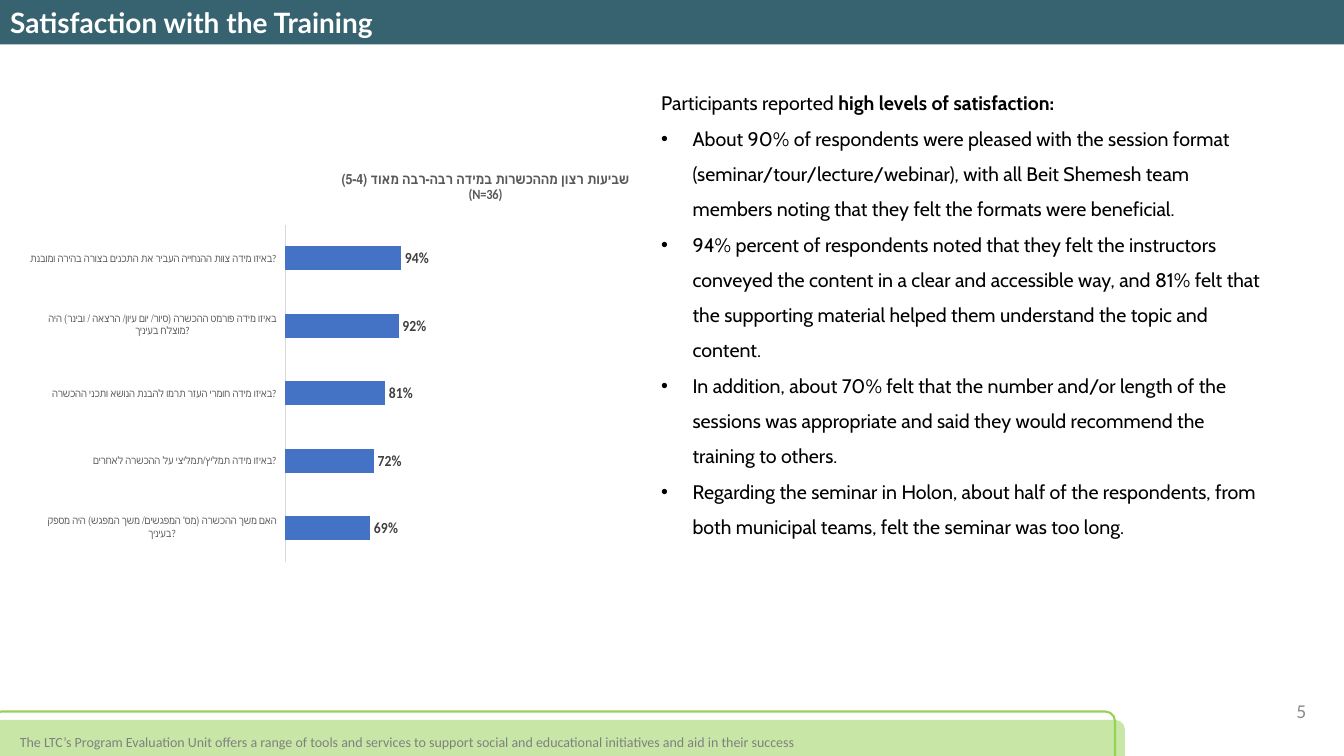
from lxml.etree import SubElement
from pptx import Presentation
from pptx.chart.data import CategoryChartData
from pptx.dml.color import RGBColor
from pptx.enum.chart import XL_CHART_TYPE, XL_LABEL_POSITION, XL_TICK_LABEL_POSITION, XL_TICK_MARK
from pptx.enum.shapes import MSO_SHAPE
from pptx.enum.text import MSO_ANCHOR, MSO_AUTO_SIZE, PP_ALIGN
from pptx.oxml import parse_xml
from pptx.oxml.ns import nsdecls, qn
from pptx.util import Cm, Pt

TITLE = "Satisfaction with the Training"
INTRO = [("Participants reported ", False), ("high levels of satisfaction:", True)]
FINDINGS = [
    "About 90% of respondents were pleased with the session format (seminar/tour/lecture/webinar), "
    "with all Beit Shemesh team members noting that they felt the formats were beneficial.",
    "94% percent of respondents noted that they felt the instructors conveyed the content in a clear "
    "and accessible way, and 81% felt that the supporting material helped them understand the topic "
    "and content.",
    "In addition, about 70% felt that the number and/or length of the sessions was appropriate and "
    "said they would recommend the training to others.",
    "Regarding the seminar in Holon, about half of the respondents, from both municipal teams, felt "
    "the seminar was too long.",
]
FOOTER = ("The LTC’s Program Evaluation Unit offers a range of tools and services to support social "
          "and educational initiatives and aid in their success")
PAGE_NUMBER = "5"
CHART_TITLE = ["שביעות רצון מההכשרות במידה רבה-רבה מאוד (5-4)", "(N=36)"]
RATINGS = [
    ("האם משך ההכשרה (מס' המפגשים/ משך המפגש) היה מספק בעיניך?", 0.69),
    ("באיזו מידה תמליץ/תמליצי על ההכשרה לאחרים?", 0.72),
    ("באיזו מידה חומרי העזר תרמו להבנת הנושא ותכני ההכשרה?", 0.81),
    ("באיזו מידה פורמט ההכשרה (סיור/ יום עיון/ הרצאה / ובינר) היה מוצלח בעיניך?", 0.92),
    ("באיזו מידה צוות ההנחייה העביר את התכנים בצורה בהירה ומובנת?", 0.94),
]


def color(hex_string):
    return RGBColor.from_string(hex_string)


def style_font(font, name, size, hex_string, bold=False):
    font.name, font.size, font.bold = name, Pt(size), bold
    font.color.rgb = color(hex_string)


def add_run(paragraph, text, *style):
    run = paragraph.add_run()
    run.text = text
    style_font(run.font, *style)


def place(shape, left, top, width, height):
    shape.left, shape.top, shape.width, shape.height = Cm(left), Cm(top), Cm(width), Cm(height)


def add_label(slide, box, text, size, hex_string, align, anchor):
    label = slide.shapes.add_textbox(*map(Cm, box))
    frame = label.text_frame
    frame.word_wrap, frame.vertical_anchor = True, anchor
    frame.paragraphs[0].alignment = align
    add_run(frame.paragraphs[0], text, "Calibri", size, hex_string)


def add_footer_bar(slide, box, fill=None, line=None):
    bar = slide.shapes.add_shape(MSO_SHAPE.ROUNDED_RECTANGLE, *map(Cm, box))
    bar.shadow.inherit = False
    if fill:
        bar.fill.solid()
        bar.fill.fore_color.rgb = color(fill)
    else:
        bar.fill.background()
    if line:
        bar.line.color.rgb, bar.line.width = color(line), Pt(1.5)
    else:
        bar.line.fill.background()


def set_bullet(paragraph, character=None):
    properties = paragraph._p.get_or_add_pPr()
    indent = Cm(0.79) if character else 0
    properties.set("marL", str(indent))
    properties.set("indent", str(-indent))
    if character:
        SubElement(properties, qn("a:buFont")).set("typeface", "Arial")
        SubElement(properties, qn("a:buChar")).set("char", character)
    else:
        SubElement(properties, qn("a:buNone"))


def layout_xml(target=None, **fractions):
    """Manual chart layout, with positions as fractions of the chart area."""
    parts = f'<c:layoutTarget val="{target}"/>' if target else ""
    parts += '<c:xMode val="edge"/><c:yMode val="edge"/>'
    parts += "".join(f'<c:{key} val="{value}"/>' for key, value in fractions.items())
    return parse_xml(f'<c:layout {nsdecls("c")}><c:manualLayout>{parts}</c:manualLayout></c:layout>')


def fill_title(title):
    place(title, 0, 0, 33.87, 1.12)
    title.fill.solid()
    title.fill.fore_color.rgb = color("36636F")
    frame = title.text_frame
    frame.auto_size, frame.vertical_anchor = MSO_AUTO_SIZE.NONE, MSO_ANCHOR.MIDDLE
    frame.paragraphs[0].alignment = PP_ALIGN.LEFT
    add_run(frame.paragraphs[0], TITLE, "Lato", 20, "FFFFFF", True)


def fill_findings(body):
    place(body, 16.41, 1.88, 15.85, 11.94)
    frame = body.text_frame
    frame.auto_size, frame.vertical_anchor = MSO_AUTO_SIZE.NONE, MSO_ANCHOR.TOP
    for index, runs in enumerate([INTRO] + [[(text, False)] for text in FINDINGS]):
        paragraph = frame.add_paragraph() if index else frame.paragraphs[0]
        paragraph.line_spacing, paragraph.space_before = 1.5, Pt(0)
        set_bullet(paragraph, "•" if index else None)
        for text, bold in runs:
            add_run(paragraph, text, "Cabin", 14, "000000", bold)


def add_ratings_chart(slide):
    data = CategoryChartData(number_format="0%")
    data.categories = [question for question, _ in RATINGS]
    data.add_series("Series 1", [share for _, share in RATINGS])
    chart = slide.shapes.add_chart(XL_CHART_TYPE.BAR_CLUSTERED, Cm(0.76), Cm(3.81),
                                   Cm(15.27), Cm(10.9), data).chart
    style_font(chart.font, "Calibri", 10, "000000")
    chart.has_legend = False

    title = chart.chart_title
    title.include_in_layout = False
    frame = title.text_frame
    for index, text in enumerate(CHART_TITLE):
        paragraph = frame.add_paragraph() if index else frame.paragraphs[0]
        add_run(paragraph, text, "Calibri", 10, "595959", True)
    for old_layout in title._element.findall(qn("c:layout")):
        title._element.remove(old_layout)
    title._element.find(qn("c:tx")).addnext(layout_xml(x=0.56, y=0.04))

    plot = chart.plots[0]
    plot.gap_width, plot.vary_by_categories = 182, False
    fill = plot.series[0].format.fill
    fill.solid()
    fill.fore_color.rgb = color("4472C4")
    plot.has_data_labels = True
    labels = plot.data_labels
    labels.show_value, labels.position = True, XL_LABEL_POSITION.OUTSIDE_END
    labels.number_format, labels.number_format_is_linked = "0%", False
    style_font(labels.font, "Calibri", 11, "404040", True)

    questions = chart.category_axis
    questions.major_tick_mark = XL_TICK_MARK.NONE
    questions.tick_label_position = XL_TICK_LABEL_POSITION.LOW
    questions.format.line.color.rgb = color("D9D9D9")
    questions.format.line.width = Pt(0.75)
    style_font(questions.tick_labels.font, "Calibri", 7.5, "595959")
    shares = chart.value_axis
    shares.minimum_scale, shares.maximum_scale = 0, 1
    shares.has_major_gridlines = shares.visible = False

    plot_area = chart._chartSpace.chart.plotArea
    for old_layout in plot_area.findall(qn("c:layout")):
        plot_area.remove(old_layout)
    plot_area.insert(0, layout_xml("inner", x=0.46, y=0.17, w=0.23, h=0.78))


def main():
    presentation = Presentation()
    presentation.slide_width, presentation.slide_height = Cm(33.87), Cm(19.05)
    slide = presentation.slides.add_slide(presentation.slide_layouts[1])
    fill_title(slide.shapes.title)
    fill_findings(slide.placeholders[1])
    add_footer_bar(slide, (-0.33, 18.14, 28.68, 1.45), fill="C8E7A7")
    add_footer_bar(slide, (-0.2, 17.93, 28.3, 1.45), line="97D258")
    add_label(slide, (0.25, 18.36, 28.68, 0.69), FOOTER, 10, "808080", PP_ALIGN.LEFT, MSO_ANCHOR.TOP)
    add_label(slide, (31.39, 17.4, 1.78, 1.02), PAGE_NUMBER, 14, "8C8C8C", PP_ALIGN.RIGHT, MSO_ANCHOR.MIDDLE)
    add_ratings_chart(slide)
    presentation.save("out.pptx")


if __name__ == "__main__":
    main()
